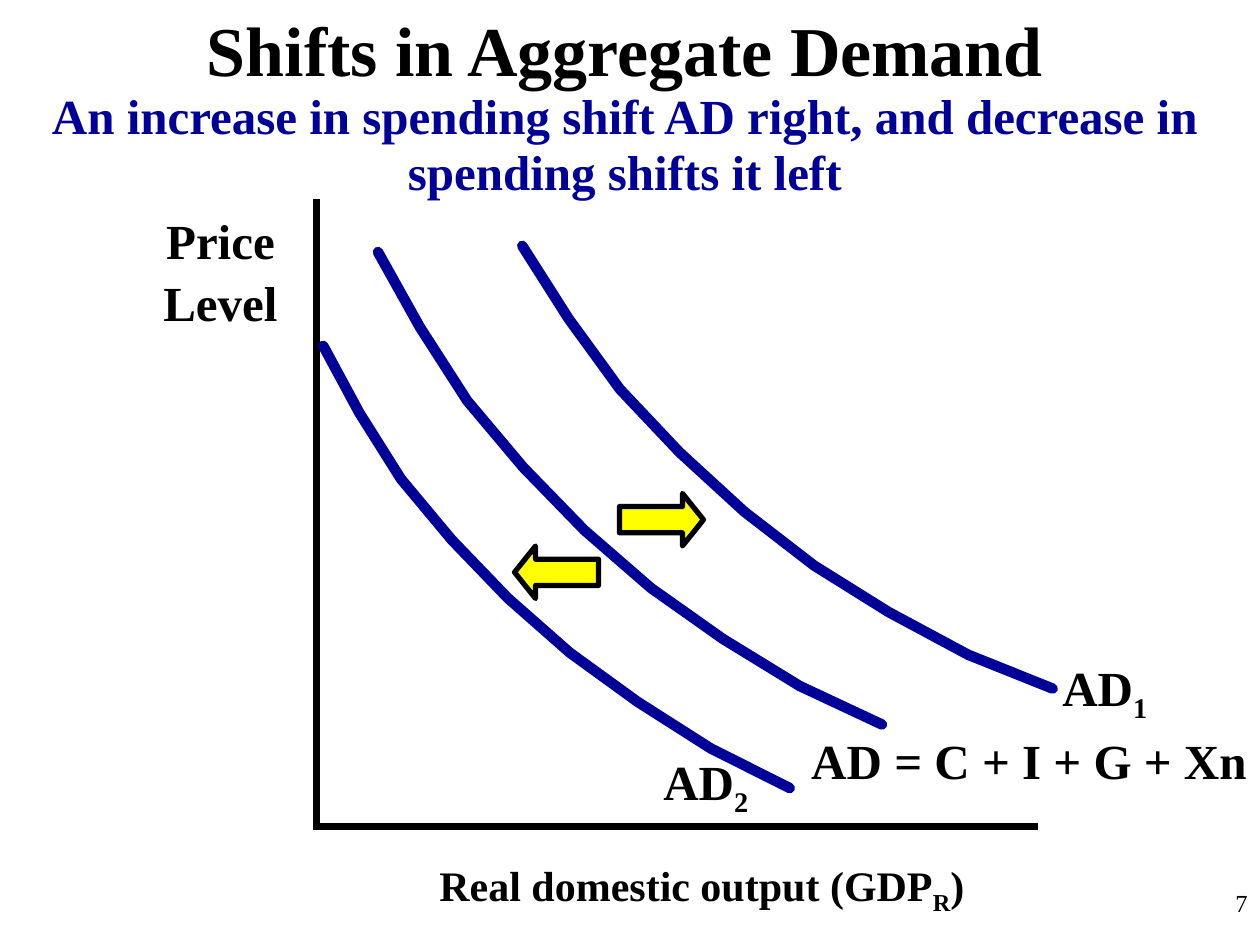
from pptx import Presentation
from pptx.dml.color import RGBColor
from pptx.enum.shapes import MSO_CONNECTOR, MSO_SHAPE
from pptx.enum.text import PP_ALIGN
from pptx.oxml.ns import qn
from pptx.util import Pt
from lxml import etree

COLORS = {"ink": "000000", "blue": "000099", "yellow": "FFFF00"}
FONT = "Times New Roman"
# Demand curve, drawn in a box of 288 by 270 points
CURVE = [(0, 0), (24, 43), (51, 85), (83, 123), (118, 159),
         (156, 192), (197, 221), (241, 248), (288, 270)]


class Board:
    def __init__(self, slide):
        self.slide = slide
        self.shapes = slide.shapes

    def color(self, name):
        return RGBColor.from_string(COLORS[name])

    def stroke(self, shape, name, width):
        shape.line.color.rgb = self.color(name)
        shape.line.width = Pt(width)

    def text(self, box, lines, size=28, color="ink", bold=True,
             align=PP_ALIGN.LEFT, wrap=False, space=None, before=0):
        """Each line is a string, or a list of (text, is_subscript) pairs."""
        frame = self.shapes.add_textbox(*map(Pt, box)).text_frame
        frame.word_wrap = wrap
        for i, line in enumerate(lines):
            para = frame.add_paragraph() if i else frame.paragraphs[0]
            para.alignment = align
            para.line_spacing = space
            if i:
                para.space_before = Pt(before)
            font = para.font
            font.name, font.size, font.bold = FONT, Pt(size), bold
            font.color.rgb = self.color(color)
            parts = [(line, False)] if isinstance(line, str) else line
            for words, sub in parts:
                run = para.add_run()
                run.text = words
                if sub:
                    run.font._element.set("baseline", "-25000")

    def axis(self, x1, y1, x2, y2):
        line = self.shapes.add_connector(
            MSO_CONNECTOR.STRAIGHT, Pt(x1), Pt(y1), Pt(x2), Pt(y2))
        self.stroke(line, "ink", 4)
        etree.SubElement(line._element.spPr, qn("a:effectLst"))

    def curve(self, left, top, height=270, turn=0):
        path = self.shapes.build_freeform(*CURVE[0], scale=Pt(1))
        path.add_line_segments(CURVE[1:], close=False)
        shape = path.convert_to_shape(Pt(left), Pt(top))
        shape.height = Pt(height)
        shape.rotation = turn
        shape.shadow.inherit = False
        shape.fill.background()
        self.stroke(shape, "blue", 6)
        line = shape.line._get_or_add_ln()
        line.set("cap", "rnd")
        etree.SubElement(line, qn("a:round"))

    def arrow(self, left, top, turn=0):
        shape = self.shapes.add_shape(
            MSO_SHAPE.RIGHT_ARROW, Pt(left), Pt(top), Pt(48), Pt(30))
        shape.adjustments[0] = 0.5
        shape.adjustments[1] = 0.4
        shape.rotation = turn
        shape.shadow.inherit = False
        shape.fill.solid()
        shape.fill.fore_color.rgb = self.color("yellow")
        self.stroke(shape, "ink", 3)


def main():
    deck = Presentation()
    deck.slide_width, deck.slide_height = Pt(720), Pt(540)
    board = Board(deck.slides.add_slide(deck.slide_layouts[6]))
    mid = PP_ALIGN.CENTER

    # Headings
    board.text((24, 0, 666, 55), ["Shifts in Aggregate Demand"],
               size=40, align=mid, wrap=True)
    board.text((12, 48, 690, 71),
               ["An increase in spending shift AD right, "
                "and decrease in spending shifts it left"],
               color="blue", align=mid, wrap=True, space=0.95)

    # Axes and their names
    board.axis(181, 114, 181, 474.5)
    board.axis(180, 472.5, 593, 472.5)
    board.text((84, 117, 84, 74), ["Price", "Level"], align=mid, before=1.5)
    board.text((244, 487.5, 316, 36),
               [[("Real domestic output (GDP", False), ("R", True),
                 (")", False)]], size=24)

    # Demand curves: first, right shift, left shift
    board.curve(216, 144)
    board.curve(306, 132, turn=356.7)
    board.curve(174, 210, height=228, turn=5.1)

    # Curve names
    board.text((456.5, 414, 55, 40), ["AD"])
    board.text((504, 414, 216, 41), ["= C + I + G + Xn"])
    for left, top, mark in ((600, 372, "1"), (372, 426, "2")):
        board.text((left, top, 64, 40), [[("AD", False), (mark, True)]])

    # Shift arrows
    board.arrow(354, 282)
    board.arrow(294, 312, turn=180)

    # Page number
    board.text((576, 504, 144, 36), ["7"], size=14, bold=False,
               align=PP_ALIGN.RIGHT, wrap=True)

    deck.save("out.pptx")


if __name__ == "__main__":
    main()
